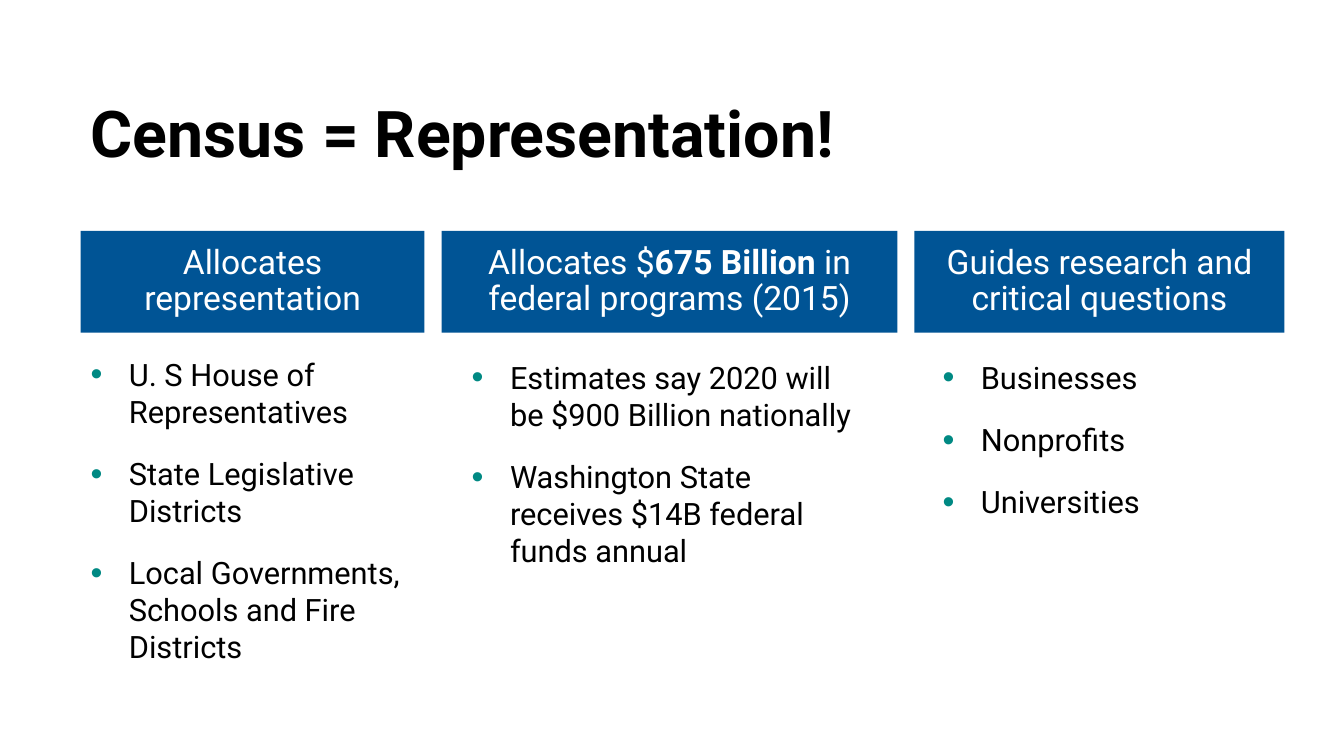
from dataclasses import dataclass

import pptx
import pptx.dml.color
import pptx.enum.shapes
import pptx.enum.text
import pptx.oxml
import pptx.oxml.ns
import pptx.util

SCALE = 9144  # EMU in one px, 100 px to the inch
FONT = "Roboto"
BLACK = pptx.dml.color.RGBColor(0x00, 0x00, 0x00)
WHITE = pptx.dml.color.RGBColor(0xFF, 0xFF, 0xFF)
BLUE = pptx.dml.color.RGBColor(0x00, 0x54, 0x95)
TEAL = pptx.dml.color.RGBColor(0x00, 0x89, 0x83)

LEFT_MARGIN = 80
BANNER_TOP, BANNER_HEIGHT = 229, 101
HANGING_INDENT = 38


@dataclass(frozen=True)
class Box:
    left: int
    top: int
    width: int
    height: int

    def emu(self) -> tuple[int, ...]:
        return tuple(px * SCALE for px in (self.left, self.top, self.width, self.height))


@dataclass(frozen=True)
class Topic:
    banner_left: int
    banner_width: int
    heading: tuple[tuple[str, bool], ...]  # text and whether it is bold
    details: Box
    points: tuple[str, ...]
    level: int = 1


TOPICS = (
    Topic(LEFT_MARGIN, 341, (("Allocates representation", False),),
          Box(LEFT_MARGIN, 348, 367, 342),
          ("U. S House of Representatives", "State Legislative Districts",
           "Local Governments, Schools and Fire Districts"), level=0),
    Topic(438, 452, (("Allocates $", False), ("675 Billion ", True),
                     ("in federal programs (2015)", False)),
          Box(458, 351, 401, 366),
          ("Estimates say 2020 will be $900 Billion nationally",
           "Washington State receives $14B federal funds annual")),
    Topic(907, 367, (("Guides research and critical questions", False),),
          Box(925, 351, 349, 366),
          ("Businesses", "Nonprofits", "Universities")),
)


def apply_format(target, values: dict) -> None:
    for attribute, value in values.items():
        setattr(target, attribute, value)


def add_run(paragraph, text: str, size: int, color, bold: bool = False) -> None:
    run = paragraph.add_run()
    run.text = text
    apply_format(run.font, {"name": FONT, "size": pptx.util.Pt(size), "bold": bold})
    run.font.color.rgb = color


def add_bullet(paragraph) -> None:
    properties = paragraph._p.get_or_add_pPr()
    properties.set("marL", str(HANGING_INDENT * SCALE))
    properties.set("indent", str(-HANGING_INDENT * SCALE))
    namespace = pptx.oxml.ns.nsdecls("a")
    for xml in (f'<a:buClr {namespace}><a:srgbClr val="{TEAL}"/></a:buClr>',
                f'<a:buSzPct {namespace} val="110000"/>',
                f'<a:buFont {namespace} typeface="Arial"/>',
                f'<a:buChar {namespace} char="•"/>'):
        properties.append(pptx.oxml.parse_xml(xml))


def write_title(title) -> None:
    box = Box(LEFT_MARGIN, 33, 1173, 142).emu()
    apply_format(title, dict(zip(("left", "top", "width", "height"), box)))
    apply_format(title.text_frame, {
        "vertical_anchor": pptx.enum.text.MSO_ANCHOR.BOTTOM,
        "auto_size": pptx.enum.text.MSO_AUTO_SIZE.NONE,
        "word_wrap": True,
    })
    paragraph = title.text_frame.paragraphs[0]
    apply_format(paragraph, {"alignment": pptx.enum.text.PP_ALIGN.LEFT, "line_spacing": 0.9})
    add_run(paragraph, "Census = Representation!", 46, BLACK, bold=True)


def draw_banner(slide, topic: Topic) -> None:
    box = Box(topic.banner_left, BANNER_TOP, topic.banner_width, BANNER_HEIGHT)
    banner = slide.shapes.add_shape(pptx.enum.shapes.MSO_SHAPE.RECTANGLE, *box.emu())
    banner.shadow.inherit = False
    banner.fill.solid()
    banner.fill.fore_color.rgb = BLUE
    banner.line.fill.background()
    apply_format(banner.text_frame, {
        "vertical_anchor": pptx.enum.text.MSO_ANCHOR.MIDDLE, "word_wrap": True})
    paragraph = banner.text_frame.paragraphs[0]
    apply_format(paragraph, {"alignment": pptx.enum.text.PP_ALIGN.CENTER, "line_spacing": 0.9})
    for text, bold in topic.heading:
        add_run(paragraph, text, 24, WHITE, bold)


def draw_details(slide, topic: Topic) -> None:
    frame = slide.shapes.add_textbox(*topic.details.emu()).text_frame
    frame.word_wrap = True
    for index, point in enumerate(topic.points):
        paragraph = frame.add_paragraph() if index else frame.paragraphs[0]
        apply_format(paragraph, {"level": topic.level, "space_before": pptx.util.Pt(18)})
        add_bullet(paragraph)
        add_run(paragraph, point, 22, BLACK)


def main() -> None:
    deck = pptx.Presentation()
    apply_format(deck, {"slide_width": 1333 * SCALE, "slide_height": 750 * SCALE})
    slide = deck.slides.add_slide(deck.slide_layouts[5])  # title only

    # Title
    write_title(slide.shapes.title)

    # Bulleted details, then the banners above them
    for draw in (draw_details, draw_banner):
        for topic in TOPICS:
            draw(slide, topic)

    deck.save("out.pptx")


if __name__ == "__main__":
    main()
